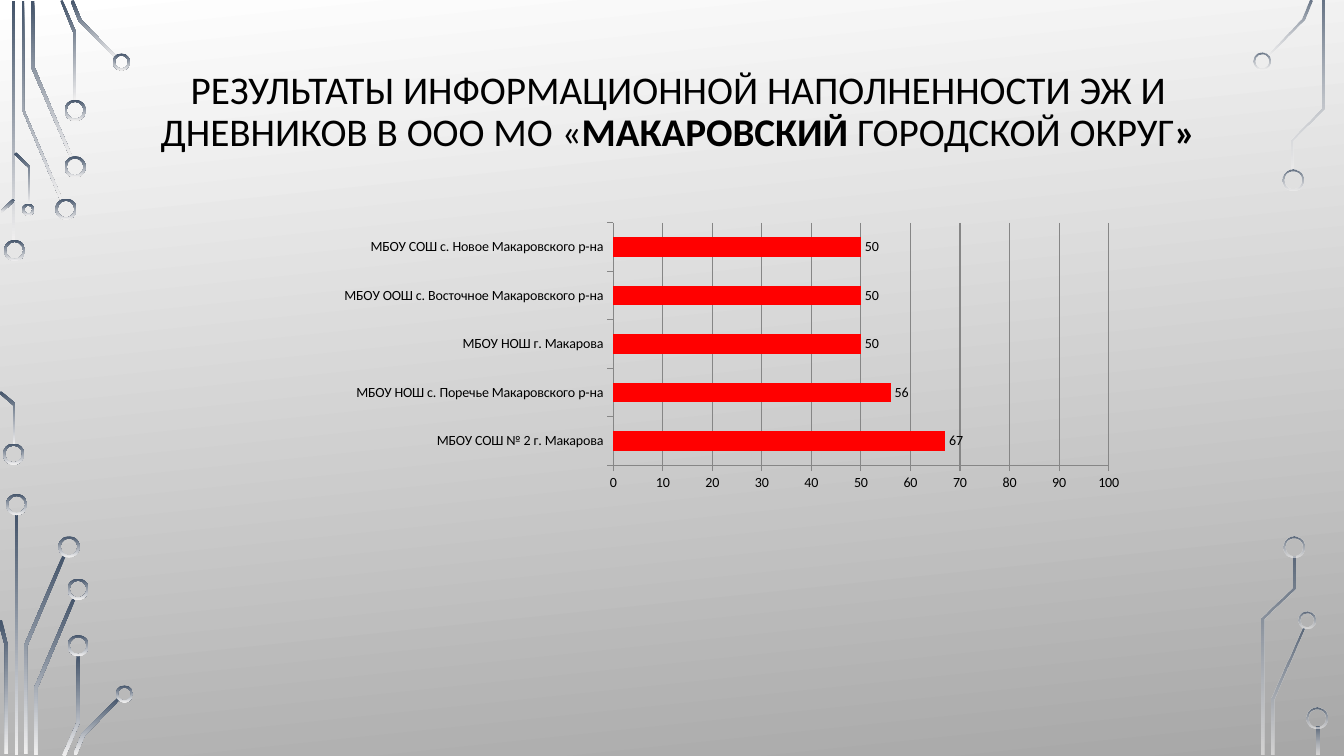
import pptx
import pptx.chart.data
import pptx.dml.color
import pptx.enum.chart
import pptx.enum.shapes
import pptx.enum.text
import pptx.oxml
import pptx.oxml.ns
import pptx.util

PX = 9144  # 100 px to the inch
BLACK = pptx.dml.color.RGBColor(0x00, 0x00, 0x00)
RED = pptx.dml.color.RGBColor(0xFF, 0x00, 0x00)
GREY = pptx.dml.color.RGBColor(0x86, 0x86, 0x86)
SLATE = pptx.dml.color.RGBColor(0x44, 0x54, 0x6A)
PALE = pptx.dml.color.RGBColor(0xF1, 0xF0, 0xF0)
WHITE = pptx.dml.color.RGBColor(0xFF, 0xFF, 0xFF)
SILVER = pptx.dml.color.RGBColor(0xA7, 0xA7, 0xA7)
OPAQUE = (100, 100)
FADED = (80, 60)
RING_WIDTH = 2

# Rails: left, top, width, height. Rings: left, top, diameter. Traces: outline points.
LEFT_RAILS = [(12, 1, 3, 239), (15, 510, 3, 239)]
LEFT_RINGS = [
    (4, 238, 21), (3, 440, 21), (55, 197, 21), (64, 155, 21), (64, 99, 21),
    (112, 53, 17), (22, 202, 12), (6, 490, 21), (58, 532, 21), (67, 574, 21),
    (67, 630, 21), (115, 680, 17),
]
LEFT_TRACES = [
    [(60, 199), (22, 109), (22, 1), (24, 1), (24, 109), (62, 198)],
    [(70, 157), (31, 67), (31, 1), (34, 1), (34, 66), (72, 156)],
    [(76, 100), (73, 100), (73, 33), (60, 1), (62, 0), (76, 33)],
    [(115, 58), (78, 21), (70, 1), (73, 0), (81, 20), (116, 56)],
    [(2, 211), (1, 209), (13, 197), (15, 199)],
    [(15, 441), (13, 441), (13, 402), (-1, 390), (1, 388), (15, 400)],
    [(30, 203), (28, 203), (28, 166), (14, 153), (16, 151), (30, 165)],
    [(27, 748), (24, 748), (24, 640), (62, 551), (65, 552), (27, 641)],
    [(8, 748), (5, 748), (5, 641), (-2, 616), (2, 615), (8, 641)],
    [(37, 749), (34, 749), (34, 682), (72, 593), (75, 594), (37, 683)],
    [(65, 750), (62, 749), (76, 717), (76, 650), (79, 650), (79, 717)],
    [(76, 749), (73, 748), (81, 728), (117, 692), (119, 694), (84, 730)],
]
RIGHT_RAILS = [(1306, 721, 3, 28)]
RIGHT_RINGS = [
    (1243, 52, 17), (1272, 168, 21), (1288, 607, 17), (1273, 532, 21), (1296, 702, 21),
]
RIGHT_TRACES = [
    [(1258, 56), (1256, 55), (1291, 19), (1299, 0), (1302, 1), (1294, 20)],
    [(1264, 749), (1261, 749), (1261, 693), (1292, 623), (1294, 624), (1264, 694)],
    [(1283, 169), (1281, 169), (1281, 138), (1311, 107), (1311, 1), (1314, 1),
     (1314, 108), (1283, 139)],
    [(1254, 749), (1251, 749), (1251, 613), (1282, 583), (1282, 552), (1285, 552),
     (1285, 584), (1254, 614)],
]

TITLE_RUNS = [
    ("РЕЗУЛЬТАТЫ ИНФОРМАЦИОННОЙ НАПОЛНЕННОСТИ ЭЖ И ДНЕВНИКОВ В ООО МО «", False),
    ("МАКАРОВСКИЙ ", True),
    ("ГОРОДСКОЙ ОКРУГ", False),
    ("»", True),
]
SCHOOL_SCORES = {
    "МБОУ СОШ № 2 г. Макарова": 67,
    "МБОУ НОШ с. Поречье Макаровского р-на": 56,
    "МБОУ НОШ г. Макарова": 50,
    "МБОУ ООШ с. Восточное Макаровского р-на": 50,
    "МБОУ СОШ с. Новое Макаровского р-на": 50,
}
PLOT_LAYOUT = {"x": 0.45, "y": 0.05, "w": 0.52, "h": 0.85}


def set_attributes(target, values):
    for name, value in values.items():
        setattr(target, name, value)


def place(shape, left, top, width, height):
    box = {"left": left, "top": top, "width": width, "height": height}
    set_attributes(shape, {name: value * PX for name, value in box.items()})


def format_font(font, size, **values):
    set_attributes(font, {"name": "Calibri", "size": pptx.util.Pt(size), **values})
    font.color.rgb = BLACK


def fill_gradient(fill, colours, clockwise_angle):
    fill.gradient()
    fill.gradient_angle = 360 - clockwise_angle
    for stop, colour in zip(fill.gradient_stops, colours):
        stop.color.rgb = colour


def style_circuit_part(shape, opacities):
    shape.shadow.inherit = False
    shape.line.fill.background()
    fill_gradient(shape.fill, (SLATE, PALE), 90)
    colours = shape.element.spPr.iter(pptx.oxml.ns.qn("a:srgbClr"))
    for colour, opacity in zip(colours, opacities):
        if opacity < 100:
            alpha = pptx.oxml.parse_xml(
                f'<a:alpha {pptx.oxml.ns.nsdecls("a")} val="{opacity * 1000}"/>')
            colour.append(alpha)


def add_rail(slide, box, opacities):
    rail = slide.shapes.add_shape(
        pptx.enum.shapes.MSO_SHAPE.RECTANGLE, *(length * PX for length in box))
    style_circuit_part(rail, opacities)


def add_ring(slide, left, top, diameter, opacities):
    ring = slide.shapes.add_shape(
        pptx.enum.shapes.MSO_SHAPE.DONUT,
        left * PX, top * PX, diameter * PX, diameter * PX)
    ring.adjustments[0] = RING_WIDTH / diameter
    style_circuit_part(ring, opacities)


def add_trace(slide, outline, opacities):
    builder = slide.shapes.build_freeform(*outline[0], scale=PX)
    builder.add_line_segments(outline[1:], close=True)
    style_circuit_part(builder.convert_to_shape(), opacities)


def add_circuit(slide, rails, rings, traces, opacities):
    for box in rails:
        add_rail(slide, box, opacities)
    for outline in traces:
        add_trace(slide, outline, opacities)
    for ring in rings:
        add_ring(slide, *ring, opacities)


def format_title(slide):
    title = slide.shapes.title
    slide.shapes.element.append(title.element)
    place(title, 131, 49, 1083, 126)
    set_attributes(title.text_frame, {
        "word_wrap": True,
        "auto_size": pptx.enum.text.MSO_AUTO_SIZE.NONE,
        "vertical_anchor": pptx.enum.text.MSO_ANCHOR.MIDDLE,
    })
    paragraph = title.text_frame.paragraphs[0]
    set_attributes(paragraph, {
        "alignment": pptx.enum.text.PP_ALIGN.CENTER, "line_spacing": 0.9})
    for text, bold in TITLE_RUNS:
        run = paragraph.add_run()
        run.text = text
        format_font(run.font, 28, bold=bold)


def set_plot_layout(chart):
    """Fix the inner plot area as fractions of the chart frame."""
    plot_area = chart.element.chart.plotArea
    for layout in plot_area.findall(pptx.oxml.ns.qn("c:layout")):
        plot_area.remove(layout)
    modes = "".join(f'<c:{side}Mode val="edge"/>' for side in "xy")
    sizes = "".join(f'<c:{side} val="{value}"/>' for side, value in PLOT_LAYOUT.items())
    plot_area.insert(0, pptx.oxml.parse_xml(
        f'<c:layout {pptx.oxml.ns.nsdecls("c")}><c:manualLayout>'
        f'<c:layoutTarget val="inner"/>{modes}{sizes}</c:manualLayout></c:layout>'))


def format_line(line):
    line.color.rgb = GREY
    line.width = pptx.util.Pt(0.75)


def add_score_chart(slide):
    data = pptx.chart.data.CategoryChartData(number_format="#,##0")
    data.categories = list(SCHOOL_SCORES)
    data.add_series("Series 1", list(SCHOOL_SCORES.values()))
    box = (length * PX for length in (183, 207, 945, 283))
    chart = slide.shapes.add_chart(
        pptx.enum.chart.XL_CHART_TYPE.BAR_CLUSTERED, *box, data).chart
    set_attributes(chart, {"has_legend": False, "has_title": False})
    format_font(chart.font, 10)
    set_plot_layout(chart)

    set_attributes(chart.value_axis, {
        "minimum_scale": 0, "maximum_scale": 100, "major_unit": 10,
        "has_major_gridlines": True})
    format_line(chart.value_axis.major_gridlines.format.line)
    for axis in (chart.category_axis, chart.value_axis):
        axis.major_tick_mark = pptx.enum.chart.XL_TICK_MARK.OUTSIDE
        format_line(axis.format.line)
        format_font(axis.tick_labels.font, 10)
    set_attributes(chart.value_axis.tick_labels, {
        "number_format": "#,##0", "number_format_is_linked": False})

    plot = chart.plots[0]
    set_attributes(plot, {
        "gap_width": 150, "vary_by_categories": False, "has_data_labels": True})
    set_attributes(plot.data_labels, {
        "show_value": True, "number_format": "#,##0", "number_format_is_linked": False,
        "position": pptx.enum.chart.XL_LABEL_POSITION.OUTSIDE_END})
    format_font(plot.data_labels.font, 10)
    bar_fill = plot.series[0].format.fill
    bar_fill.solid()
    bar_fill.fore_color.rgb = RED


def main():
    presentation = pptx.Presentation()
    set_attributes(presentation, {"slide_width": 1333 * PX, "slide_height": 750 * PX})
    slide = presentation.slides.add_slide(presentation.slide_layouts[5])
    fill_gradient(slide.background.fill, (WHITE, SILVER), 84)
    add_circuit(slide, LEFT_RAILS, LEFT_RINGS, LEFT_TRACES, OPAQUE)
    add_circuit(slide, RIGHT_RAILS, RIGHT_RINGS, RIGHT_TRACES, FADED)
    format_title(slide)
    add_score_chart(slide)
    presentation.save("out.pptx")


if __name__ == "__main__":
    main()
